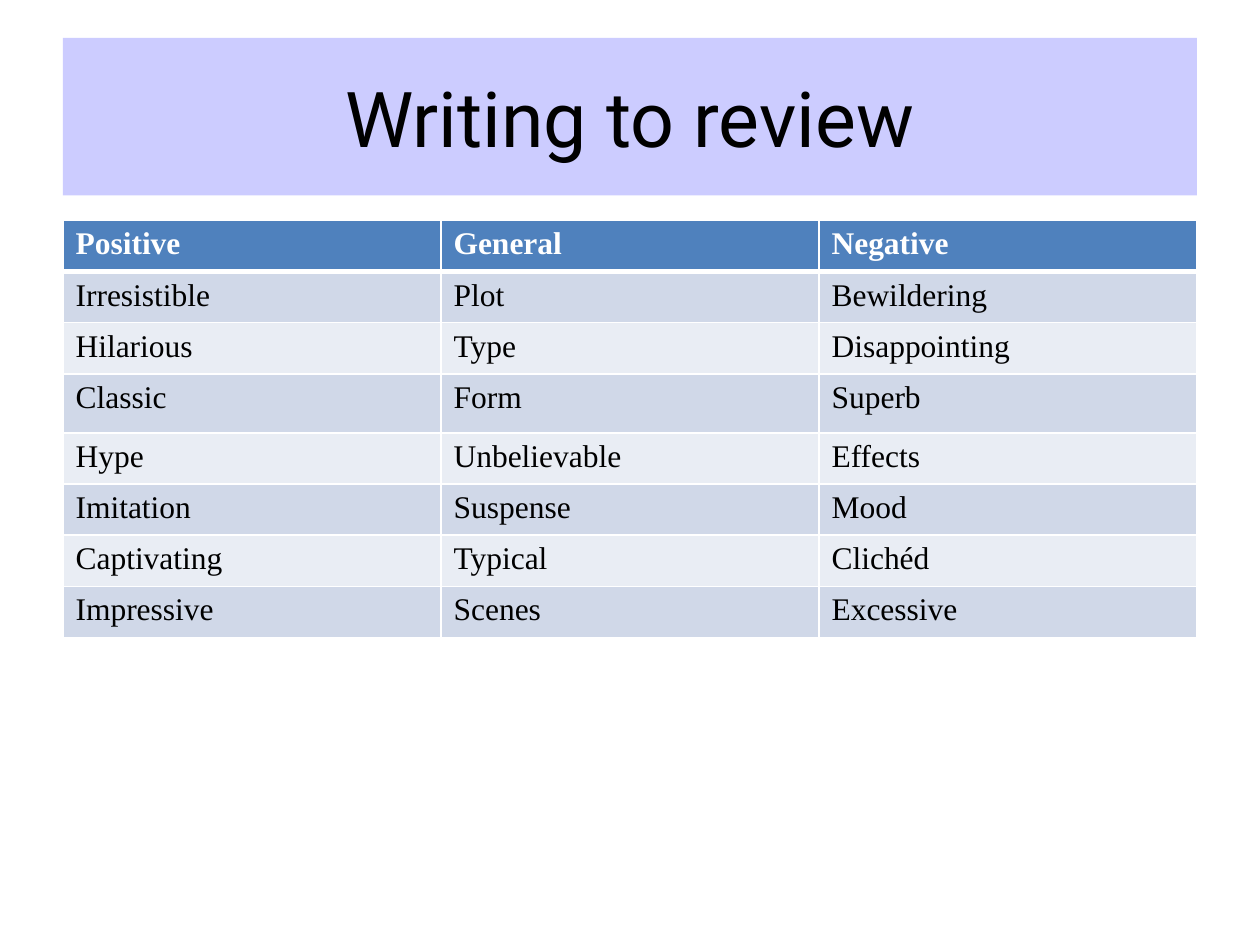
from dataclasses import dataclass

from lxml.etree import SubElement
from pptx import Presentation
from pptx.dml.color import RGBColor
from pptx.enum.shapes import MSO_SHAPE
from pptx.enum.text import MSO_ANCHOR, PP_ALIGN
from pptx.oxml.ns import qn
from pptx.util import Inches, Pt


@dataclass(frozen=True)
class Theme:
    banner: str = "CCCCFF"
    header: str = "4F81BD"
    bands: tuple = ("D0D8E8", "E9EDF4")
    light: str = "FFFFFF"
    dark: str = "000000"
    title_font: str = "Roboto"
    body_font: str = "Times New Roman"
    title_size: int = 44
    body_size: int = 18
    thin: int = 1
    thick: int = 3


class SlideBuilder:
    def __init__(self, page, theme):
        self.page = page
        self.theme = theme

    def add_text(self, frame, text, color, **formats):
        para = frame.paragraphs[0]
        span = para.add_run()
        span.text = text
        for name, value in formats.items():
            setattr(span.font, name, value)
        span.font.color.rgb = RGBColor.from_string(color)
        return para

    def title(self, text, left, top, width, height):
        theme = self.theme
        box = self.page.shapes.add_shape(
            MSO_SHAPE.RECTANGLE, Inches(left), Inches(top), Inches(width), Inches(height))
        box.shadow.inherit = False
        box.fill.solid()
        box.fill.fore_color.rgb = RGBColor.from_string(theme.banner)
        box.line.fill.background()
        box.text_frame.vertical_anchor = MSO_ANCHOR.MIDDLE
        para = self.add_text(box.text_frame, text, theme.dark,
                             name=theme.title_font, size=Pt(theme.title_size))
        para.alignment = PP_ALIGN.CENTER

    def borders(self, cell, widths):
        properties = cell._tc.get_or_add_tcPr()
        for position, (side, width) in enumerate(widths.items()):
            line = SubElement(properties, qn(f"a:ln{side}"), w=str(Pt(width)))
            fill = SubElement(line, qn("a:solidFill"))
            SubElement(fill, qn("a:srgbClr"), val=self.theme.light)
            properties.insert(position, line)

    def table(self, rows, left, top, width, heights):
        theme = self.theme
        grid = self.page.shapes.add_table(
            len(rows), len(rows[0]), Inches(left), Inches(top),
            Inches(width), Inches(sum(heights))).table
        for index, (words, height) in enumerate(zip(rows, heights)):
            grid.rows[index].height = Inches(height)
            is_header = index == 0
            fill = theme.header if is_header else theme.bands[(index - 1) % 2]
            # The rule under the header is shared by the first two rows
            widths = {
                "L": theme.thin,
                "R": theme.thin,
                "T": theme.thick if index == 1 else theme.thin,
                "B": theme.thick if is_header else theme.thin,
            }
            for cell, word in zip(grid.rows[index].cells, words):
                cell.fill.solid()
                cell.fill.fore_color.rgb = RGBColor.from_string(fill)
                self.borders(cell, widths)
                self.add_text(cell.text_frame, word, theme.light if is_header else theme.dark,
                              name=theme.body_font, size=Pt(theme.body_size), bold=is_header)


def main():
    deck = Presentation()
    deck.slide_width, deck.slide_height = Inches(10), Inches(7.5)
    page = deck.slides.add_slide(deck.slide_layouts[6])
    builder = SlideBuilder(page, Theme())

    # Title banner
    builder.title("Writing to review", 0.5, 0.3, 9, 1.25)

    # Vocabulary table: equal rows, apart from a taller one for "Classic"
    vocabulary = [
        ("Positive", "General", "Negative"),
        ("Irresistible", "Plot", "Bewildering"),
        ("Hilarious", "Type", "Disappointing"),
        ("Classic", "Form", "Superb"),
        ("Hype", "Unbelievable", "Effects"),
        ("Imitation", "Suspense", "Mood"),
        ("Captivating", "Typical", "Clichéd"),
        ("Impressive", "Scenes", "Excessive"),
    ]
    table_height, tall_row = 3.31, 0.47
    plain_row = (table_height - tall_row) / (len(vocabulary) - 1)
    heights = [tall_row if row[0] == "Classic" else plain_row for row in vocabulary]
    builder.table(vocabulary, 0.5, 1.75, 9, heights)

    deck.save("out.pptx")


if __name__ == "__main__":
    main()
